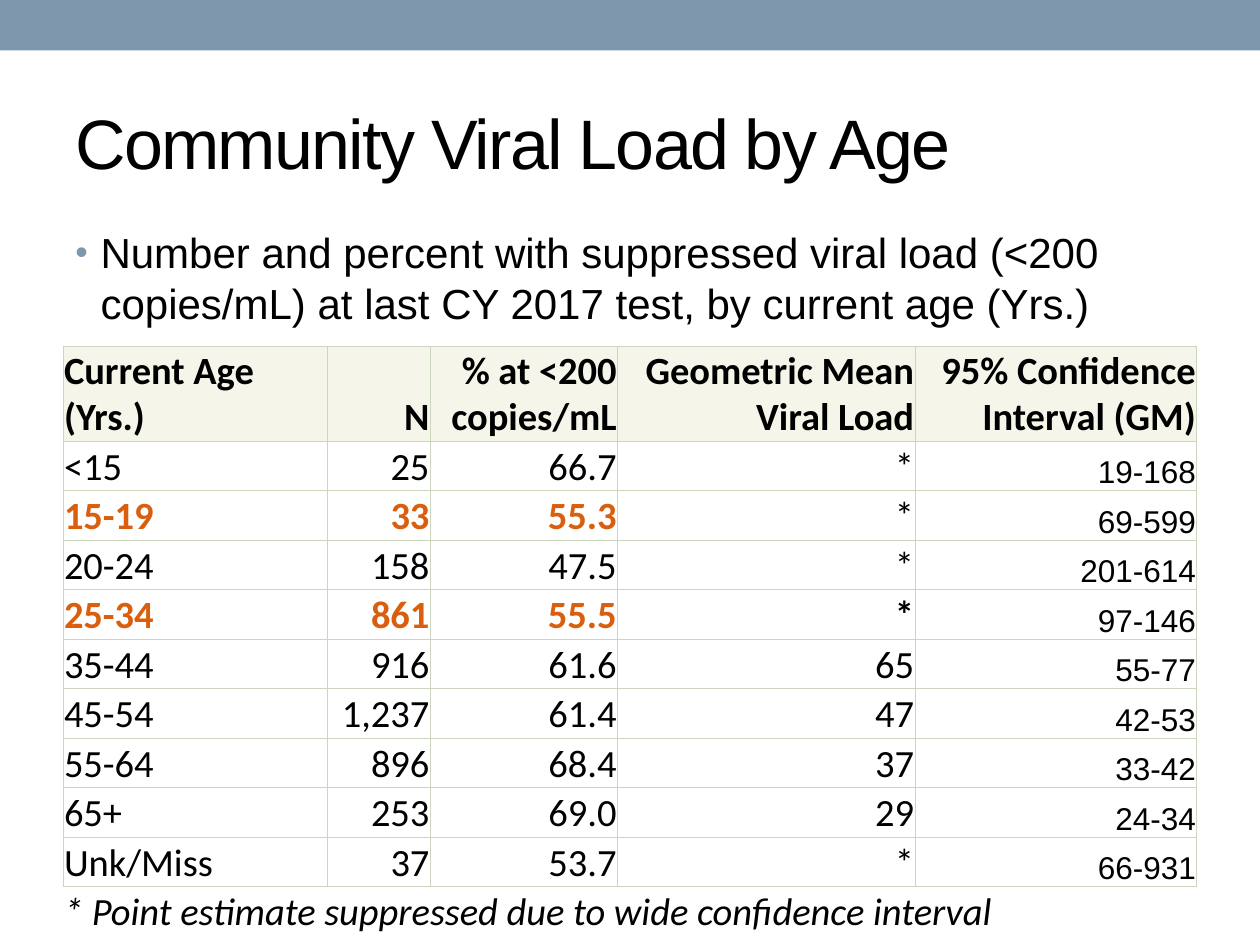
from lxml import etree
from pptx import Presentation
from pptx.dml.color import RGBColor
from pptx.enum.shapes import MSO_SHAPE
from pptx.enum.text import MSO_ANCHOR, PP_ALIGN
from pptx.oxml.ns import qn
from pptx.util import Pt

RECTANGLE = MSO_SHAPE.RECTANGLE
MIDDLE, TOP, BOTTOM = MSO_ANCHOR.MIDDLE, MSO_ANCHOR.TOP, MSO_ANCHOR.BOTTOM
LEFT, RIGHT = PP_ALIGN.LEFT, PP_ALIGN.RIGHT

# Content
TITLE = "Community Viral Load by Age"
SUMMARY = ("Number and percent with suppressed viral load (<200 copies/mL) "
           "at last CY 2017 test, by current age (Yrs.)")
HEADINGS = ("Current Age (Yrs.)", "N", "% at <200 copies/mL",
            "Geometric Mean Viral Load", "95% Confidence Interval (GM)")
AGE_GROUPS = [
    ("<15", "25", "66.7", "*", "19-168"),
    ("15-19", "33", "55.3", "*", "69-599"),
    ("20-24", "158", "47.5", "*", "201-614"),
    ("25-34", "861", "55.5", "*", "97-146"),
    ("35-44", "916", "61.6", "65", "55-77"),
    ("45-54", "1,237", "61.4", "47", "42-53"),
    ("55-64", "896", "68.4", "37", "33-42"),
    ("65+", "253", "69.0", "29", "24-34"),
    ("Unk/Miss", "37", "53.7", "*", "66-931"),
]
FOOTNOTE = "* Point estimate suppressed due to wide confidence interval"
HIGHLIGHTED = ("15-19", "25-34")
BOLD_MEAN = "25-34"

# Style
COLORS = {"band": "7E97AD", "text": "000000", "highlight": "D95F0E",
          "heading": "F6F5EA", "border": "CCD6BE"}
COLUMN_WIDTHS = (151, 59, 107, 170, 161)
HEADING_HEIGHT, ROW_HEIGHT = 54, 28.3
MEAN_COLUMN, INTERVAL_COLUMN = 3, 4
MARGIN, CONTENT_WIDTH = 36, 648


def rgb(name):
    return RGBColor.from_string(COLORS[name])


def add_run(paragraph, text, size, font="Arial", color="text", bold=False, italic=False):
    run = paragraph.add_run()
    run.text = text
    run.font.size = Pt(size)
    run.font.name = font
    run.font.color.rgb = rgb(color)
    run.font.bold = bold
    run.font.italic = italic
    return run


def add_text(slide, top, height, anchor):
    box = slide.shapes.add_textbox(Pt(MARGIN), Pt(top), Pt(CONTENT_WIDTH), Pt(height))
    box.text_frame.word_wrap = True
    box.text_frame.vertical_anchor = anchor
    return box.text_frame.paragraphs[0]


def add_bullet(paragraph, indent):
    properties = paragraph._p.get_or_add_pPr()
    properties.set("marL", str(Pt(indent)))
    properties.set("indent", str(-Pt(indent)))
    color = etree.SubElement(properties, qn("a:buClr"))
    etree.SubElement(color, qn("a:srgbClr"), val=COLORS["band"])
    etree.SubElement(properties, qn("a:buSzPct"), val="85000")
    etree.SubElement(properties, qn("a:buFont"), typeface="Arial")
    etree.SubElement(properties, qn("a:buChar"), char="•")


def set_borders(cell, visible):
    properties = cell._tc.get_or_add_tcPr()
    for position, side in enumerate(("lnL", "lnR", "lnT", "lnB")):
        line = etree.Element(qn(f"a:{side}"), w=str(Pt(0.5)))
        if side in visible:
            fill = etree.SubElement(line, qn("a:solidFill"))
            etree.SubElement(fill, qn("a:srgbClr"), val=COLORS["border"])
        else:
            etree.SubElement(line, qn("a:noFill"))
        properties.insert(position, line)


def format_cell(cell, fill=None, borders=("lnL", "lnR", "lnT", "lnB")):
    cell.margin_left = cell.margin_right = cell.margin_top = Pt(0.6)
    cell.margin_bottom = Pt(0)
    cell.vertical_anchor = BOTTOM
    if fill:
        cell.fill.solid()
        cell.fill.fore_color.rgb = rgb(fill)
    else:
        cell.fill.background()
    set_borders(cell, borders)


def cell_style(row, column):
    if row == 0:
        return {"size": 22, "font": "Calibri", "bold": True}
    if column == INTERVAL_COLUMN:
        return {"size": 18}
    age = AGE_GROUPS[row - 1][0]
    if column == MEAN_COLUMN:
        return {"size": 22, "font": "Calibri", "bold": age == BOLD_MEAN}
    marked = age in HIGHLIGHTED
    return {"size": 22, "font": "Calibri", "bold": marked,
            "color": "highlight" if marked else "text"}


def add_age_table(slide):
    rows = [HEADINGS, *AGE_GROUPS]
    heights = [HEADING_HEIGHT] + [ROW_HEIGHT] * (len(AGE_GROUPS) + 1)
    table = slide.shapes.add_table(len(heights), len(HEADINGS), Pt(MARGIN), Pt(198),
                                   Pt(sum(COLUMN_WIDTHS)), Pt(sum(heights))).table
    table.first_row = table.horz_banding = False
    for column, width in zip(table.columns, COLUMN_WIDTHS):
        column.width = Pt(width)
    for row, height in zip(table.rows, heights):
        row.height = Pt(height)

    for r, values in enumerate(rows):
        for c, value in enumerate(values):
            cell = table.cell(r, c)
            format_cell(cell, "heading" if r == 0 else None)
            paragraph = cell.text_frame.paragraphs[0]
            paragraph.alignment = RIGHT if c else LEFT
            add_run(paragraph, value, **cell_style(r, c))

    # Footnote across the last row
    last = len(rows)
    for c in range(len(HEADINGS)):
        format_cell(table.cell(last, c), borders=("lnT",))
    footnote = table.cell(last, 0)
    footnote.merge(table.cell(last, len(HEADINGS) - 1))
    add_run(footnote.text_frame.paragraphs[0], FOOTNOTE, 22, "Calibri", italic=True)


def main():
    deck = Presentation()
    deck.slide_width, deck.slide_height = Pt(720), Pt(540)
    slide = deck.slides.add_slide(deck.slide_layouts[6])

    # Top band
    band = slide.shapes.add_shape(RECTANGLE, 0, 0, deck.slide_width, Pt(28.8))
    band.shadow.inherit = False
    band.fill.solid()
    band.fill.fore_color.rgb = rgb("band")
    band.line.fill.background()

    # Title
    title = add_run(add_text(slide, 42, 78, MIDDLE), TITLE, 40)
    title.font._element.set("spc", "-100")

    # Summary bullet
    summary = add_text(slide, 126, 84, TOP)
    summary.space_before = summary.space_after = Pt(3)
    add_bullet(summary, 14.4)
    add_run(summary, SUMMARY, 24)

    add_age_table(slide)
    deck.save("out.pptx")


if __name__ == "__main__":
    main()
